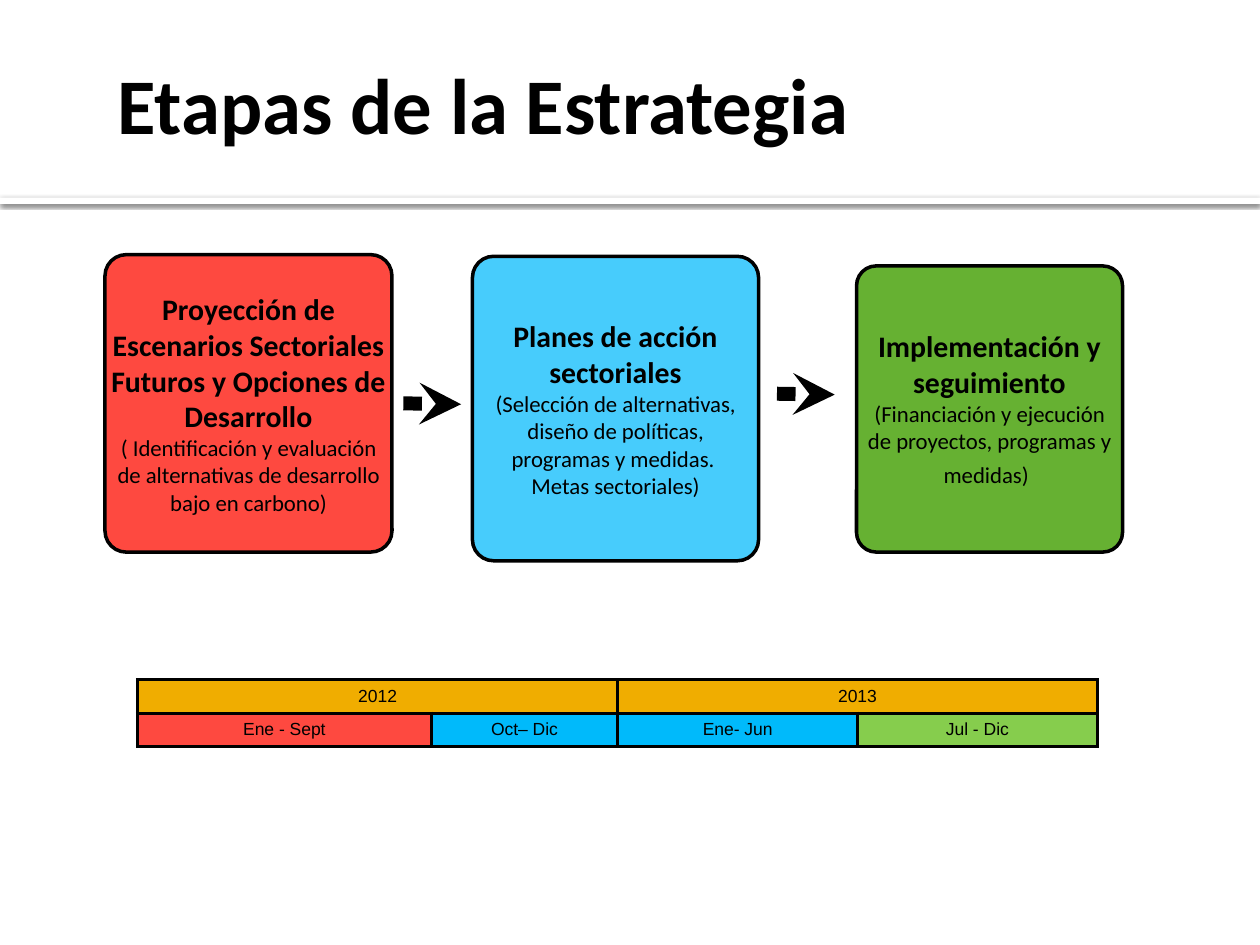
from lxml import etree
from pptx import Presentation
from pptx.dml.color import RGBColor
from pptx.enum import shapes, text
from pptx.oxml import ns
from pptx.util import Pt

BLACK = RGBColor(0x00, 0x00, 0x00)
WHITE = RGBColor(0xFF, 0xFF, 0xFF)
RED = RGBColor(0xFE, 0x49, 0x40)
SKY = RGBColor(0x47, 0xCC, 0xFC)
GREEN = RGBColor(0x66, 0xB1, 0x32)
AMBER = RGBColor(0xF0, 0xAD, 0x00)
BLUE = RGBColor(0x00, 0xBA, 0xFB)
LIME = RGBColor(0x86, 0xCD, 0x4D)

STAGES = [
    ((60, 145.5, 164, 170), RED, [
        [("Proyección de Escenarios Sectoriales Futuros y Opciones de Desarrollo", 17, True)],
        [("( Identificación y evaluación de alternativas de desarrollo bajo en carbono)", 13, False)],
    ]),
    ((270, 146.5, 163.5, 174), SKY, [
        [("Planes de acción sectoriales", 17, True)],
        [("(Selección de alternativas, diseño de políticas, programas y medidas. ", 13, False)],
        [("Metas sectoriales)", 13, False)],
    ]),
    ((489.5, 152, 152, 163.5), GREEN, [
        [("Implementación y seguimiento", 17, True)],
        [("(Financiación y ejecución de proyectos, programas y medidas)", 13, False),
         (" ", 17, False)],
    ]),
]
ARROWS = [(230.5, 230.5, 263.5, 231), (444, 225, 477, 225.5)]
YEARS = [
    (78.5, "2012", [("Ene - Sept", 168, RED), ("Oct– Dic", 106.5, BLUE)]),
    (353, "2013", [("Ene- Jun", 137, BLUE), ("Jul - Dic", 137, LIME)]),
]


def add_child(parent, tag, **attributes):
    return etree.SubElement(parent, ns.qn(tag), attributes)


def add_span(para, words, size, bold=False, name="Calibri"):
    span = para.add_run()
    span.text = words
    span.font.size = Pt(size)
    span.font.bold = bold
    span.font.name = name
    span.font.color.rgb = BLACK


def set_insets(frame, left, top, right, bottom):
    frame.margin_left, frame.margin_top = Pt(left), Pt(top)
    frame.margin_right, frame.margin_bottom = Pt(right), Pt(bottom)


def add_rule(page):
    rule = page.shapes.add_shape(
        shapes.MSO_SHAPE.RECTANGLE, Pt(0), Pt(113), Pt(720), Pt(3.6))
    rule.fill.solid()
    rule.fill.fore_color.rgb = WHITE
    rule.line.fill.background()
    effects = add_child(rule._element.spPr, "a:effectLst")
    shadow = add_child(effects, "a:outerShdw", blurRad=str(Pt(2.5)), dist=str(Pt(0.8)),
                       dir="5400000", algn="ctr", rotWithShape="0")
    add_child(add_child(shadow, "a:srgbClr", val=str(BLACK)), "a:alpha", val="60000")


def set_title(page, words):
    title = page.shapes.title
    title.left, title.top, title.width, title.height = Pt(60), Pt(9.5), Pt(588), Pt(98.5)
    frame = title.text_frame
    frame.auto_size = text.MSO_AUTO_SIZE.NONE
    frame.vertical_anchor = text.MSO_ANCHOR.MIDDLE
    set_insets(frame, 7.2, 3.6, 3.6, 3.6)
    para = frame.paragraphs[0]
    para.alignment = text.PP_ALIGN.LEFT
    add_span(para, words, 45, True)


def add_stage(page, bounds, color, paragraphs):
    box = page.shapes.add_shape(
        shapes.MSO_SHAPE.ROUNDED_RECTANGLE, *[Pt(value) for value in bounds])
    box.adjustments[0] = 0.074
    box.shadow.inherit = False
    box.fill.solid()
    box.fill.fore_color.rgb = color
    box.line.color.rgb = BLACK
    box.line.width = Pt(2)
    frame = box.text_frame
    frame.word_wrap = True
    frame.vertical_anchor = text.MSO_ANCHOR.MIDDLE
    set_insets(frame, 0, 0, 0, 0)
    for index, spans in enumerate(paragraphs):
        para = frame.add_paragraph() if index else frame.paragraphs[0]
        para.alignment = text.PP_ALIGN.CENTER
        for words, size, bold in spans:
            add_span(para, words, size, bold)


def add_arrow(page, ends):
    arrow = page.shapes.add_connector(
        shapes.MSO_CONNECTOR.STRAIGHT, *[Pt(value) for value in ends])
    arrow.line.color.rgb = BLACK
    arrow.line.width = Pt(8)
    add_child(arrow.line._get_or_add_ln(), "a:tailEnd", type="stealth")
    add_child(arrow._element.spPr, "a:effectLst")


def fill_cell(cell, words, color):
    properties = cell._tc.get_or_add_tcPr()
    for side in ("L", "R", "T", "B"):
        border = add_child(properties, f"a:ln{side}", w=str(Pt(2)))
        add_child(add_child(border, "a:solidFill"), "a:srgbClr", val=str(BLACK))
    cell.fill.solid()
    cell.fill.fore_color.rgb = color
    cell.vertical_anchor = text.MSO_ANCHOR.MIDDLE
    set_insets(cell, 2.9, 2.9, 2.9, 2.9)
    para = cell.text_frame.paragraphs[0]
    para.alignment = text.PP_ALIGN.CENTER
    if words:
        add_span(para, words, 10, name="Arial")
    else:
        para.font.size = Pt(10)


def add_year(page, left, year, periods):
    width = sum(period[1] for period in periods)
    table = page.shapes.add_table(
        2, len(periods), Pt(left), Pt(388.5), Pt(width), Pt(38)).table
    table.first_row = False
    table.horz_banding = False
    for column, (words, span_width, color) in enumerate(periods):
        table.columns[column].width = Pt(span_width)
        fill_cell(table.cell(0, column), "" if column else year, AMBER)
        fill_cell(table.cell(1, column), words, color)
    table.cell(0, 0).merge(table.cell(0, len(periods) - 1))


def main():
    deck = Presentation()
    deck.slide_width, deck.slide_height = Pt(720), Pt(540)
    page = deck.slides.add_slide(deck.slide_layouts[5])
    add_rule(page)
    set_title(page, "Etapas de la Estrategia")
    for stage in STAGES:
        add_stage(page, *stage)
    for year in YEARS:
        add_year(page, *year)
    for ends in ARROWS:
        add_arrow(page, ends)
    deck.save("out.pptx")


if __name__ == "__main__":
    main()
